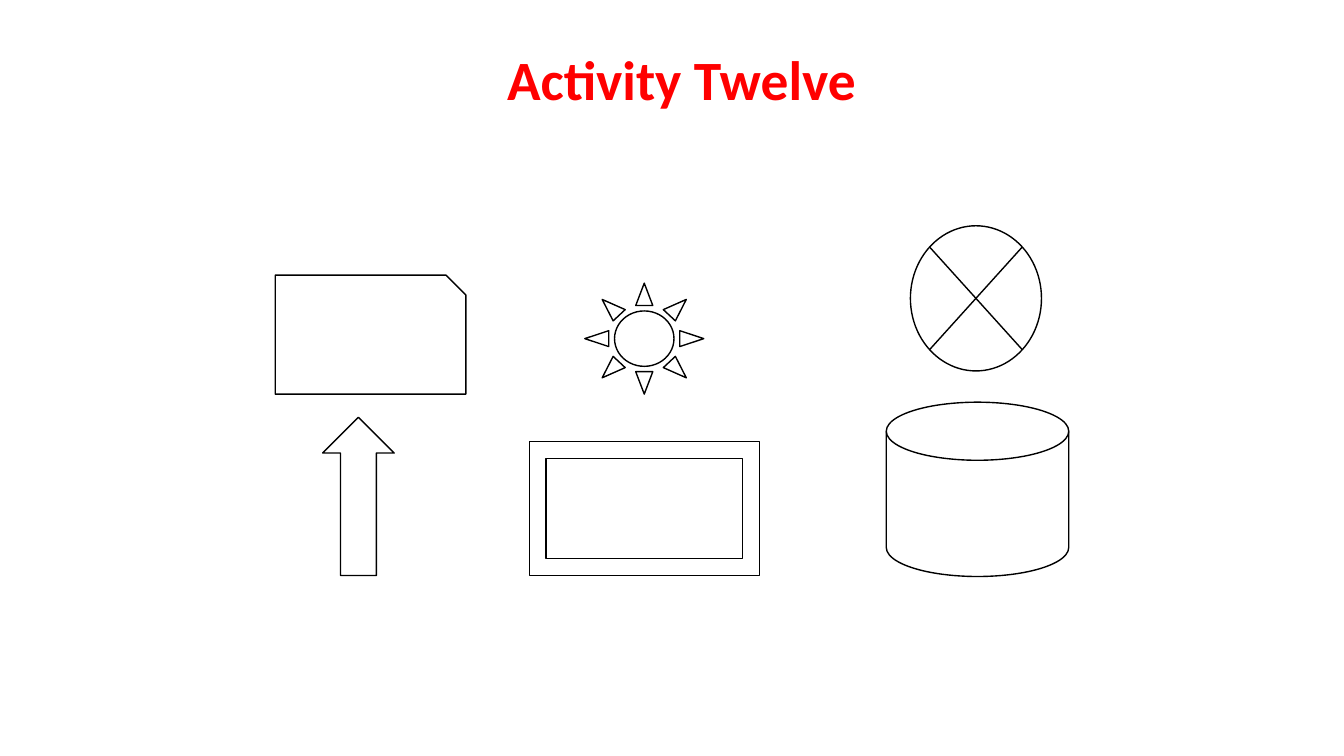
from pptx import Presentation
from pptx.dml.color import RGBColor
from pptx.enum.shapes import MSO_SHAPE
from pptx.enum.text import MSO_ANCHOR, PP_ALIGN
from pptx.util import Emu, Pt

EMU_PER_PX = 9144
BLANK_LAYOUT = 6
MIDDLE = MSO_ANCHOR.MIDDLE
CENTER = PP_ALIGN.CENTER
SNIPPED_CARD = MSO_SHAPE.SNIP_1_RECTANGLE
UP_ARROW = MSO_SHAPE.UP_ARROW
SUN = MSO_SHAPE.SUN
CYLINDER = MSO_SHAPE.FLOWCHART_MAGNETIC_DISK
CROSSED_CIRCLE = MSO_SHAPE.FLOWCHART_SUMMING_JUNCTION
FRAME = MSO_SHAPE.FRAME

COLORS = {"title": "FF0000", "outline": "000000"}
TITLE_FONT = {"name": "Calibri", "size": Pt(39.6), "bold": True}

OUTLINED_SHAPES = [
    (SNIPPED_CARD, (273, 273, 189, 118)),
    (UP_ARROW, (320, 414, 71, 157)),
    (SUN, (580, 281, 118, 110)),
    (CYLINDER, (879, 399, 181, 173)),
    (CROSSED_CIRCLE, (903, 224, 130, 144)),
    (FRAME, (525, 438, 228, 133)),
]


def px(length):
    return Emu(length * EMU_PER_PX)


def set_attributes(target, values):
    for name, value in values.items():
        setattr(target, name, value)


class ActivitySlide:
    def __init__(self, presentation):
        layout = presentation.slide_layouts[BLANK_LAYOUT]
        self.slide = presentation.slides.add_slide(layout)
        self.outline_width = Pt(1)

    def color(self, name):
        return RGBColor.from_string(COLORS[name])

    def add_title(self, text, box):
        shape = self.slide.shapes.add_textbox(*map(px, box))
        set_attributes(shape.text_frame, {"word_wrap": True, "vertical_anchor": MIDDLE})
        paragraph = shape.text_frame.paragraphs[0]
        set_attributes(paragraph, {"alignment": CENTER, "line_spacing": 0.9})
        run = paragraph.add_run()
        run.text = text
        set_attributes(run.font, TITLE_FONT)
        run.font.color.rgb = self.color("title")

    def add_outlined_shape(self, kind, box):
        shape = self.slide.shapes.add_shape(kind, *map(px, box))
        shape.shadow.inherit = False
        shape.fill.background()
        shape.line.color.rgb = self.color("outline")
        shape.line.width = self.outline_width


def main():
    presentation = Presentation()
    set_attributes(presentation, {"slide_width": px(1333), "slide_height": px(750)})
    activity = ActivitySlide(presentation)
    activity.add_title("Activity Twelve", (226, 44, 900, 76))
    for kind, box in OUTLINED_SHAPES:
        activity.add_outlined_shape(kind, box)
    presentation.save("out.pptx")


if __name__ == "__main__":
    main()
